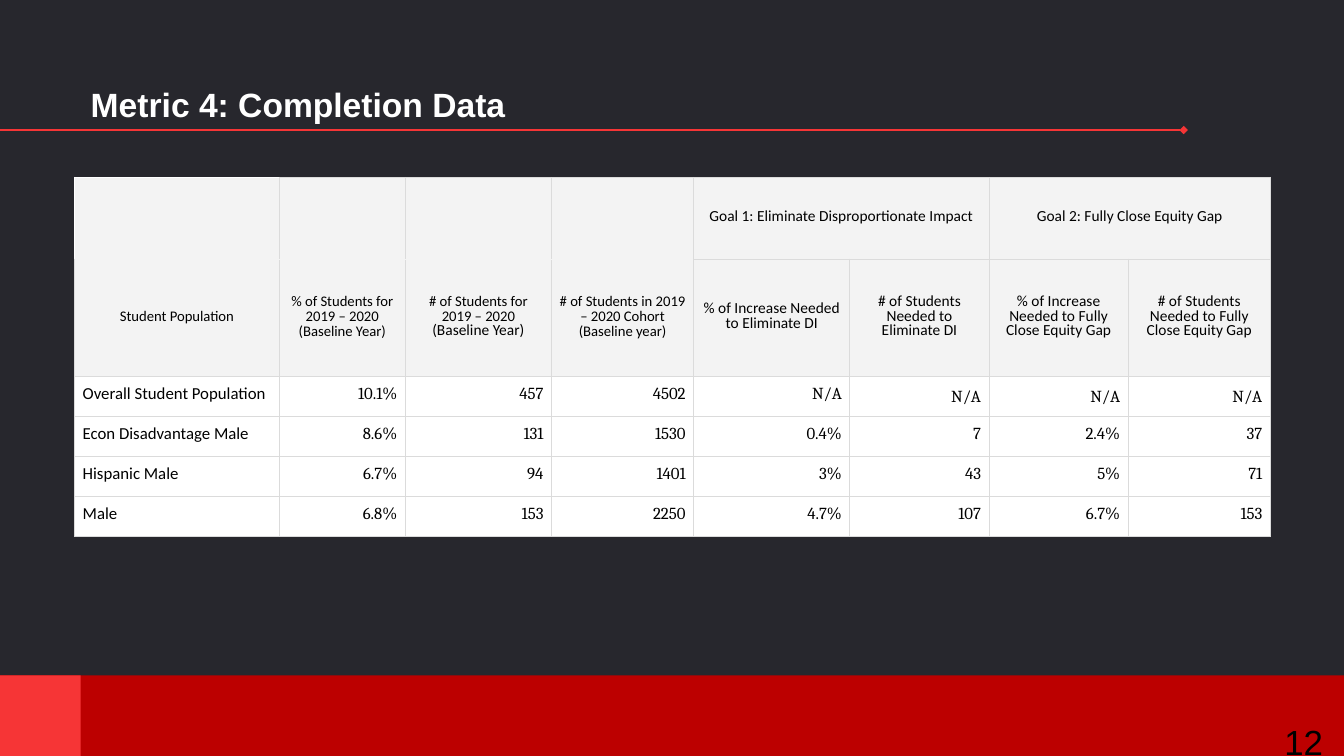
from dataclasses import dataclass

from lxml import etree
from pptx import Presentation
from pptx.dml.color import RGBColor
from pptx.enum.shapes import MSO_CONNECTOR, MSO_SHAPE
from pptx.enum.text import MSO_ANCHOR, PP_ALIGN
from pptx.oxml.ns import qn
from pptx.slide import Slide
from pptx.table import Table, _Cell
from pptx.text.text import TextFrame
from pptx.util import Inches, Pt

STRAIGHT = MSO_CONNECTOR.STRAIGHT
RECTANGLE = MSO_SHAPE.RECTANGLE
MIDDLE, BOTTOM = MSO_ANCHOR.MIDDLE, MSO_ANCHOR.BOTTOM
LEFT, CENTER, RIGHT = PP_ALIGN.LEFT, PP_ALIGN.CENTER, PP_ALIGN.RIGHT

DARK = RGBColor(0x27, 0x27, 0x2D)
RED = RGBColor(0xBC, 0x00, 0x00)
BRIGHT_RED = RGBColor(0xF6, 0x35, 0x36)
WHITE = RGBColor(0xFF, 0xFF, 0xFF)
BLACK = RGBColor(0, 0, 0)
HEADER_GREY = RGBColor(0xF3, 0xF3, 0xF3)
GRID_GREY = RGBColor(0xDB, 0xDB, 0xDB)

TABLE_WIDTH, TABLE_HEIGHT = 11.86, 3.56
COLUMN_WIDTHS = [2.03, 1.25, 1.45, 1.41, 1.55, 1.38, 1.38, 1.41]
HEADER_HEIGHTS = [0.81, 1.17]
UNGROUPED_COLUMNS = 4
LINE_PITCH = 10.5


@dataclass(frozen=True)
class Band:
    left: float
    width: float
    color: RGBColor


@dataclass(frozen=True)
class Goal:
    column: int
    text: str


@dataclass(frozen=True)
class Heading:
    lines: list[str]
    sizes: list[float]


BANDS = [Band(0, 13.33, RED), Band(0, 0.8, BRIGHT_RED)]
GOALS = [
    Goal(4, "Goal 1: Eliminate Disproportionate Impact"),
    Goal(6, "Goal 2: Fully Close Equity Gap"),
]
HEADINGS = [
    Heading(["Student Population"], [10.5]),
    Heading(["% of Students for 2019 – 2020 (Baseline Year)"], [10.5]),
    Heading(["# of Students for 2019 – 2020", "(Baseline Year)"], [10.5, 11]),
    Heading(["# of Students in 2019 – 2020 Cohort", "(Baseline year)"], [10.5, 10.5]),
    Heading(["% of Increase Needed to Eliminate DI"], [11]),
    Heading(["# of Students Needed to Eliminate DI"], [11]),
    Heading(["% of Increase Needed to Fully Close Equity Gap"], [11]),
    Heading(["# of Students Needed to Fully Close Equity Gap"], [11]),
]
POPULATIONS = [
    ["Overall Student Population", "10.1%", "457", "4502", "N/A", "N/A", "N/A", "N/A"],
    ["Econ Disadvantage Male", "8.6%", "131", "1530", "0.4%", "7", "2.4%", "37"],
    ["Hispanic Male", "6.7%", "94", "1401", "3%", "43", "5%", "71"],
    ["Male", "6.8%", "153", "2250", "4.7%", "107", "6.7%", "153"],
]


def write(frame: TextFrame, lines: list[str], *, sizes: list[float], font: str = "Calibri",
          color: RGBColor = BLACK, bold: bool = False, align: PP_ALIGN = LEFT,
          pitch: float | None = None) -> None:
    """Fill a frame with one paragraph per line, each in its own size."""
    for index, (line, size) in enumerate(zip(lines, sizes)):
        paragraph = frame.add_paragraph() if index else frame.paragraphs[0]
        paragraph.alignment = align
        if pitch is not None:
            paragraph.line_spacing = Pt(pitch)
        run = paragraph.add_run()
        run.text = line
        run.font.name = font
        run.font.size = Pt(size)
        run.font.bold = bold
        run.font.color.rgb = color


def set_insets(frame: TextFrame, inset: float) -> None:
    frame.margin_left = frame.margin_right = Inches(inset)
    frame.margin_top = frame.margin_bottom = Inches(inset)


def add_title(slide: Slide) -> None:
    title = slide.shapes.title
    title.left, title.top = Inches(0.8), Inches(0.53)
    title.width, title.height = Inches(10.93), Inches(0.8)
    frame = title.text_frame
    set_insets(frame, 0.1)
    frame.vertical_anchor = BOTTOM
    write(frame, ["Metric 4: Completion Data"], sizes=[24], font="Arial", color=WHITE, bold=True)


def add_title_rule(slide: Slide) -> None:
    rule = slide.shapes.add_connector(
        STRAIGHT, Inches(0), Inches(1.29), Inches(11.74), Inches(1.29))
    rule.line.color.rgb = BRIGHT_RED
    rule.line.width = Pt(1.5)
    etree.SubElement(rule.line._get_or_add_ln(), qn("a:tailEnd"), type="diamond")
    etree.SubElement(rule._element.spPr, qn("a:effectLst"))


def add_footer(slide: Slide) -> None:
    for band in BANDS:
        bar = slide.shapes.add_shape(
            RECTANGLE, Inches(band.left), Inches(6.7), Inches(band.width), Inches(0.8))
        bar.shadow.inherit = False
        bar.fill.solid()
        bar.fill.fore_color.rgb = band.color
        bar.line.fill.background()
    page_number = slide.shapes.add_textbox(Inches(12.64), Inches(7.22), Inches(0.7), Inches(0.28))
    frame = page_number.text_frame
    frame.word_wrap = True
    frame.vertical_anchor = MIDDLE
    set_insets(frame, 0.1)
    write(frame, ["12"], sizes=[24.9], font="Arial")


def format_cell(cell: _Cell, fill: RGBColor, edges: dict[str, RGBColor]) -> None:
    """Set the fill, insets and borders; edges holds the borders that are not grid grey."""
    cell.vertical_anchor = MIDDLE
    cell.margin_left = cell.margin_right = Inches(0.08)
    cell.margin_top = cell.margin_bottom = Inches(0.04)
    properties = cell._tc.get_or_add_tcPr()
    for side in "LRTB":
        border = etree.SubElement(properties, qn(f"a:ln{side}"), w=str(Pt(0.82)))
        solid = etree.SubElement(border, qn("a:solidFill"))
        etree.SubElement(solid, qn("a:srgbClr"), val=str(edges.get(side, GRID_GREY)))
    cell.fill.solid()
    cell.fill.fore_color.rgb = fill


def format_grid(table: Table) -> None:
    for row in range(len(table.rows)):
        for column in range(len(table.columns)):
            edges = {}
            if column < UNGROUPED_COLUMNS and row < len(HEADER_HEIGHTS):
                edges["T" if row else "B"] = HEADER_GREY
            if row == column == 0:
                edges.update(L=WHITE, T=WHITE)
            fill = HEADER_GREY if row < len(HEADER_HEIGHTS) else WHITE
            format_cell(table.cell(row, column), fill, edges)


def add_completion_table(slide: Slide) -> None:
    row_count = len(HEADER_HEIGHTS) + len(POPULATIONS)
    table = slide.shapes.add_table(
        row_count, len(COLUMN_WIDTHS), Inches(0.74), Inches(1.76),
        Inches(TABLE_WIDTH), Inches(TABLE_HEIGHT)).table
    body_height = (TABLE_HEIGHT - sum(HEADER_HEIGHTS)) / len(POPULATIONS)
    for column, width in zip(table.columns, COLUMN_WIDTHS):
        column.width = Inches(width)
    for row, height in zip(table.rows, HEADER_HEIGHTS + [body_height] * len(POPULATIONS)):
        row.height = Inches(height)
    format_grid(table)

    for goal in GOALS:
        cell = table.cell(0, goal.column)
        cell.merge(table.cell(0, goal.column + 1))
        write(cell.text_frame, [goal.text], sizes=[11], align=CENTER, pitch=LINE_PITCH)
    for column, heading in enumerate(HEADINGS):
        write(table.cell(1, column).text_frame, heading.lines, sizes=heading.sizes,
              align=CENTER, pitch=LINE_PITCH)
    for row, population in enumerate(POPULATIONS, start=len(HEADER_HEIGHTS)):
        for column, value in enumerate(population):
            natural_pitch = value == "N/A" and column > UNGROUPED_COLUMNS
            write(table.cell(row, column).text_frame, [value], sizes=[12],
                  font="Cambria" if column else "Calibri",
                  align=RIGHT if column else LEFT,
                  pitch=None if natural_pitch else LINE_PITCH)


def main() -> None:
    presentation = Presentation()
    presentation.slide_width, presentation.slide_height = Inches(13.33), Inches(7.5)
    slide = presentation.slides.add_slide(presentation.slide_layouts.get_by_name("Title Only"))
    slide.background.fill.solid()
    slide.background.fill.fore_color.rgb = DARK
    add_title_rule(slide)
    add_footer(slide)
    add_title(slide)
    add_completion_table(slide)
    presentation.save("out.pptx")


if __name__ == "__main__":
    main()
